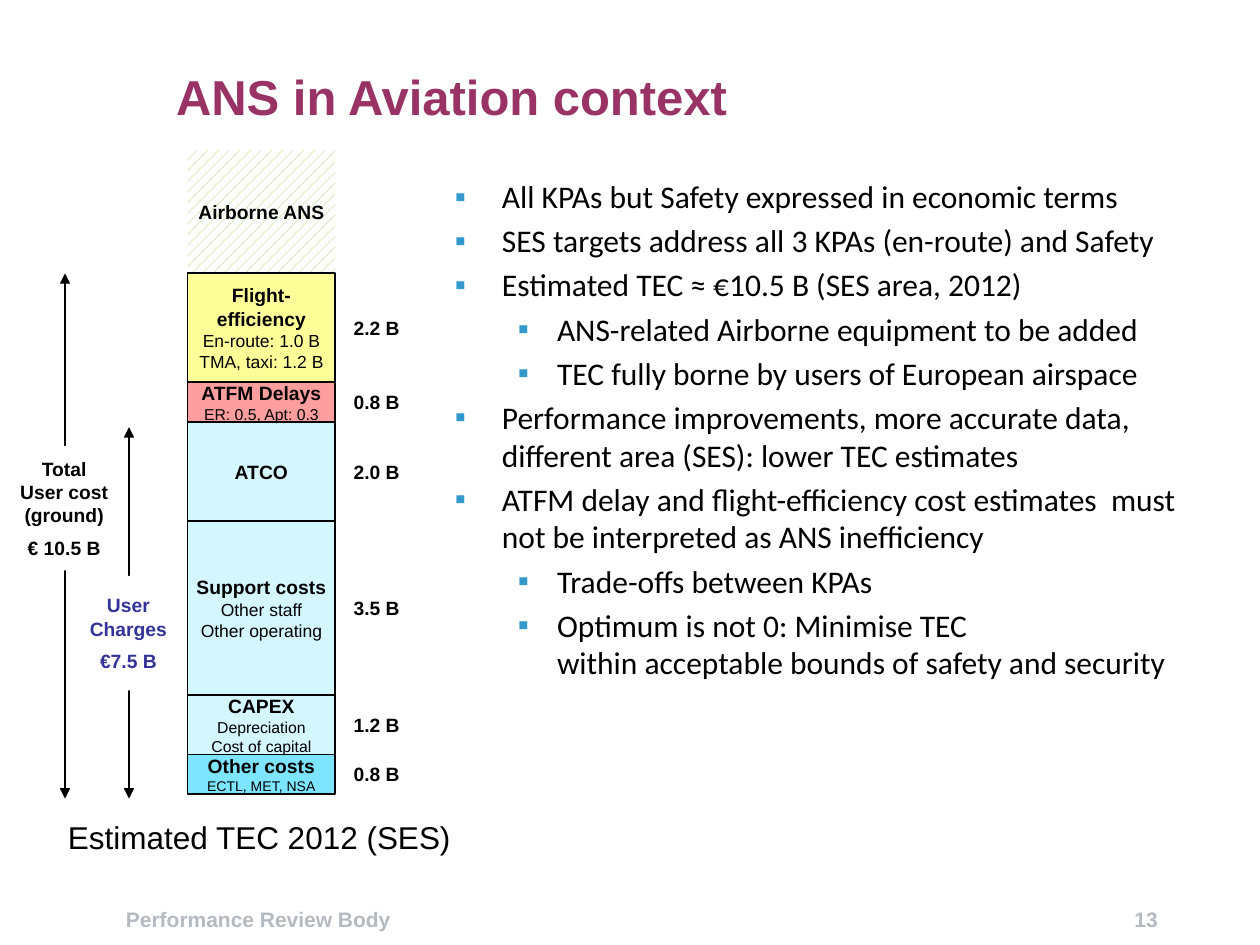
from dataclasses import dataclass
from lxml.etree import SubElement
from pptx import Presentation
from pptx.dml.color import RGBColor
from pptx.enum.dml import MSO_PATTERN
from pptx.enum.shapes import MSO_CONNECTOR, MSO_SHAPE
from pptx.enum.text import MSO_ANCHOR, PP_ALIGN
from pptx.oxml.ns import qn
from pptx.util import Cm, Pt


@dataclass(frozen=True)
class Theme:
    black: str = "000000"
    white: str = "FFFFFF"
    plum: str = "993366"
    navy: str = "333399"
    gray: str = "B4BAC0"
    bullet: str = "3399CC"
    green: str = "92D050"
    yellow: str = "FFFF99"
    red: str = "FF0000"
    cyan: str = "00CCFF"
    title: int = 28
    body: int = 18
    foot: int = 12
    label: int = 11
    note: int = 10
    small: int = 9
    tiny: int = 8


def style(para, size, bold=False, color="000000", name="Arial"):
    para.font.size = Pt(size)
    para.font.bold = bold
    para.font.name = name
    para.font.color.rgb = RGBColor.from_string(color)


def write(shape, rows, color="000000", align=PP_ALIGN.CENTER, gap=0):
    frame = shape.text_frame
    frame.word_wrap = True
    frame.vertical_anchor = MSO_ANCHOR.MIDDLE
    frame.margin_left = frame.margin_right = 0
    frame.margin_top = frame.margin_bottom = 0
    for i, (text, size, bold) in enumerate(rows):
        para = frame.add_paragraph() if i else frame.paragraphs[0]
        para.text = text
        para.alignment = align
        if i and gap:
            para.space_before = Pt(gap)
        style(para, size, bold, color)


theme = Theme()
deck = Presentation()
deck.slide_width, deck.slide_height = Cm(25.4), Cm(19.05)
slide = deck.slides.add_slide(deck.slide_layouts[6])
shapes = slide.shapes

foot = shapes.add_textbox(Cm(2.29), Cm(18.14), Cm(22), Cm(0.76))
foot.text_frame.word_wrap = True
foot.text_frame.vertical_anchor = MSO_ANCHOR.BOTTOM
para = foot.text_frame.paragraphs[0]
para.text = "Performance Review Body\t13"
tabs = SubElement(para._p.get_or_add_pPr(), qn("a:tabLst"))
SubElement(tabs, qn("a:tab"), pos=str(Cm(20.8)), algn="r")
style(para, theme.foot, True, theme.gray)

title = shapes.add_textbox(Cm(3.5), Cm(1.27), Cm(20.5), Cm(1.75))
write(title, [("ANS in Aviation context", theme.title, True)], theme.plum, PP_ALIGN.LEFT)
title.text_frame.vertical_anchor = MSO_ANCHOR.TOP
title.text_frame.margin_left = Cm(0.05)
title.text_frame.margin_top = Cm(0.08)

points = [
    (0, "All KPAs but Safety expressed in economic terms"),
    (0, "SES targets address all 3 KPAs (en-route) and Safety"),
    (0, "Estimated TEC ≈ €10.5 B (SES area, 2012)"),
    (1, "ANS-related Airborne equipment to be added"),
    (1, "TEC fully borne by users of European airspace"),
    (0, "Performance improvements, more accurate data, different area (SES): lower TEC estimates"),
    (0, "ATFM delay and flight-efficiency cost estimates  must not be interpreted as ANS inefficiency"),
    (1, "Trade-offs between KPAs"),
    (1, "Optimum is not 0: Minimise TEC\vwithin acceptable bounds of safety and security"),
]
indents = [(0.95, -0.95), (2.06, -0.79)]
frame = shapes.add_textbox(Cm(8.92), Cm(3.45), Cm(15.47), Cm(13.18)).text_frame
frame.word_wrap = True
for i, (level, text) in enumerate(points):
    para = frame.add_paragraph() if i else frame.paragraphs[0]
    para.text = text
    para.level = level
    if i:
        para.space_before = Pt(3.6)
    props = para._p.get_or_add_pPr()
    left, hang = indents[level]
    props.set("marL", str(Cm(left)))
    props.set("indent", str(Cm(hang)))
    tint = SubElement(props, qn("a:buClr"))
    SubElement(tint, qn("a:srgbClr"), val=theme.bullet)
    SubElement(props, qn("a:buFont"), typeface="Arial")
    SubElement(props, qn("a:buChar"), char="▪")
    style(para, theme.body, name="Calibri")

for x, top in [(1.31, 5.51), (2.6, 8.61)]:
    arrow = shapes.add_connector(MSO_CONNECTOR.STRAIGHT, Cm(x), Cm(top), Cm(x), Cm(16.1))
    arrow.line.width = Pt(1)
    arrow.line.color.rgb = RGBColor.from_string(theme.black)
    line = arrow.line._get_or_add_ln()
    SubElement(line, qn("a:headEnd"), type="triangle")
    SubElement(line, qn("a:tailEnd"), type="triangle")
    SubElement(arrow._element.spPr, qn("a:effectLst"))

totals = [
    (0.1, 8.99, 2.39, 2.51, theme.black, "Total\vUser cost\v(ground)", "€ 10.5 B"),
    (1.65, 11.61, 1.88, 2.31, theme.navy, "User\vCharges", "€7.5 B"),
]
for x, y, w, h, color, name, cost in totals:
    card = shapes.add_shape(MSO_SHAPE.RECTANGLE, Cm(x), Cm(y), Cm(w), Cm(h))
    card.shadow.inherit = False
    card.fill.solid()
    card.fill.fore_color.rgb = RGBColor.from_string(theme.white)
    card.line.fill.background()
    write(card, [(name, theme.label, True), (cost, theme.label, True)], color, gap=5.5)

costs = [
    (None, None, 0, "Airborne ANS", 0, []),
    (2.2, theme.yellow, 100, "Flight-efficiency", theme.note, ["En-route: 1.0 B", "TMA, taxi: 1.2 B"]),
    (0.8, theme.red, 38, "ATFM Delays", theme.small, ["ER: 0.5, Apt: 0.3"]),
    (2.0, theme.cyan, 17, "ATCO", 0, []),
    (3.5, theme.cyan, 17, "Support costs", theme.note, ["Other staff", "Other operating"]),
    (1.2, theme.cyan, 17, "CAPEX", theme.small, ["Depreciation\vCost of capital"]),
    (0.8, theme.cyan, 51, "Other costs", theme.tiny, ["ECTL, MET, NSA"]),
]
top = 3.02
for cost, color, alpha, name, size, notes in costs:
    high = cost or 2.49
    block = shapes.add_shape(MSO_SHAPE.RECTANGLE, Cm(3.78), Cm(top), Cm(2.98), Cm(high))
    block.shadow.inherit = False
    if cost:
        block.fill.solid()
        block.fill.fore_color.rgb = RGBColor.from_string(color)
        if alpha < 100:
            tint = block._element.spPr.find(".//" + qn("a:srgbClr"))
            SubElement(tint, qn("a:alpha"), val=str(alpha * 1000))
        block.line.width = Pt(1)
        block.line.color.rgb = RGBColor.from_string(theme.black)
        label = shapes.add_textbox(Cm(7.13), Cm(top), Cm(1.2), Cm(high))
        write(label, [(f"{cost} B", theme.label, True)], align=PP_ALIGN.LEFT)
    else:
        block.fill.patterned()
        block.fill.pattern = MSO_PATTERN.PERCENT_20
        block.fill.fore_color.rgb = RGBColor.from_string(theme.green)
        block.fill.back_color.rgb = RGBColor.from_string(theme.white)
        block.line.fill.background()
    write(block, [(name, theme.label, True)] + [(note, size, False) for note in notes])
    top += high

base = shapes.add_textbox(Cm(1.12), Cm(16.36), Cm(8.53), Cm(1.02))
base.text_frame.word_wrap = False
base.text_frame.text = "Estimated TEC 2012 (SES)"
style(base.text_frame.paragraphs[0], theme.body)

deck.save("out.pptx")
